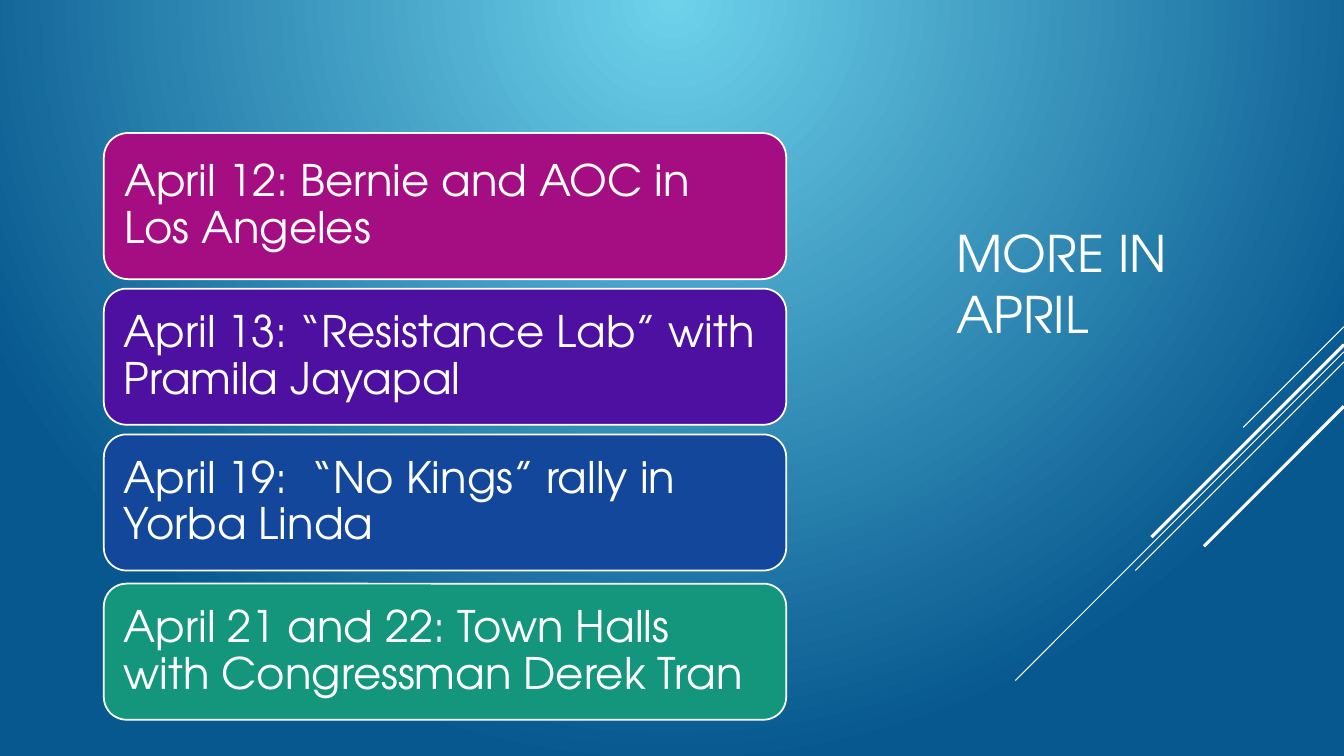
from lxml.etree import SubElement
from pptx import Presentation
from pptx.dml.color import RGBColor
from pptx.enum.shapes import MSO_CONNECTOR, MSO_SHAPE
from pptx.enum.text import MSO_ANCHOR, PP_ALIGN
from pptx.oxml.ns import qn
from pptx.util import Pt

WHITE = RGBColor(0xFF, 0xFF, 0xFF)
SKY = RGBColor(0x6E, 0xD2, 0xEB)
OCEAN = RGBColor(0x06, 0x58, 0x8E)
MAGENTA = RGBColor(0xA5, 0x0E, 0x82)
PURPLE = RGBColor(0x4D, 0x10, 0xA0)
BLUE = RGBColor(0x12, 0x47, 0x9B)
GREEN = RGBColor(0x14, 0x96, 0x7C)
FONT = "TeX Gyre Adventor"
SLIDE_WIDTH, SLIDE_HEIGHT = 960, 540


def write_text(shape, text, size, inset, line_spacing):
    """Fill a shape with one left-aligned, vertically centred white paragraph."""
    frame_format = {
        "word_wrap": True,
        "vertical_anchor": MSO_ANCHOR.MIDDLE,
        "margin_left": Pt(inset),
        "margin_right": Pt(inset),
        "margin_top": Pt(inset),
        "margin_bottom": Pt(inset),
    }
    for name, value in frame_format.items():
        setattr(shape.text_frame, name, value)
    paragraph = shape.text_frame.paragraphs[0]
    paragraph.alignment = PP_ALIGN.LEFT
    paragraph.line_spacing = line_spacing
    run = paragraph.add_run()
    run.text = text
    run.font.name = FONT
    run.font.size = Pt(size)
    run.font.color.rgb = WHITE


presentation = Presentation()
presentation.slide_width = Pt(SLIDE_WIDTH)
presentation.slide_height = Pt(SLIDE_HEIGHT)
slide = presentation.slides.add_slide(presentation.slide_layouts[6])

# Background: a circular gradient that spreads from the middle of the top edge
background_fill = slide.background.fill
background_fill.gradient()
for stop, position, color in zip(background_fill.gradient_stops, (0, 1), (SKY, OCEAN)):
    stop.position = position
    stop.color.rgb = color
gradient = slide.element.find(".//" + qn("a:gradFill"))
linear = gradient.find(qn("a:lin"))
circle = SubElement(gradient, qn("a:path"), {"path": "circle"})
SubElement(circle, qn("a:fillToRect"), {"l": "0", "t": "0", "r": "0", "b": "100000"})
gradient.replace(linear, circle)

# Diagonal stripes at 45 degrees from the right edge: start height, run, weight
stripes = [
    (233.3, 72, 0.75),
    (251.3, 234.7, 0.75),
    (258.5, 149, 0.75),
    (246.2, 137.5, 2.25),
    (290.2, 100, 2.25),
]
for top, run_length, weight in stripes:
    stripe = slide.shapes.add_connector(
        MSO_CONNECTOR.STRAIGHT,
        Pt(SLIDE_WIDTH), Pt(top), Pt(SLIDE_WIDTH - run_length), Pt(top + run_length),
    )
    stripe.line.color.rgb = WHITE
    stripe.line.width = Pt(weight)
    SubElement(stripe.element.spPr, qn("a:effectLst"))

title = slide.shapes.add_textbox(Pt(676), Pt(74.2), Pt(240), Pt(255.6))
write_text(title, "MORE IN APRIL", 36, inset=7.2, line_spacing=1)

# Event cards: top, height, colour, text
events = [
    (95, 104.4, MAGENTA, "April 12: Bernie and AOC in Los Angeles"),
    (206.2, 97.2, PURPLE, "April 13: “Resistance Lab” with Pramila Jayapal"),
    (310.3, 97.2, BLUE, "April 19:  “No Kings” rally in Yorba Linda"),
    (416.9, 97.2, GREEN, "April 21 and 22: Town Halls with Congressman Derek Tran"),
]
for top, height, color, text in events:
    card = slide.shapes.add_shape(
        MSO_SHAPE.ROUNDED_RECTANGLE, Pt(74.2), Pt(top), Pt(487.4), Pt(height)
    )
    card.shadow.inherit = False
    card.fill.solid()
    card.fill.fore_color.rgb = color
    card.line.color.rgb = WHITE
    card.line.width = Pt(1.25)
    write_text(card, text, 31, inset=9.4, line_spacing=0.9)

presentation.save("out.pptx")
